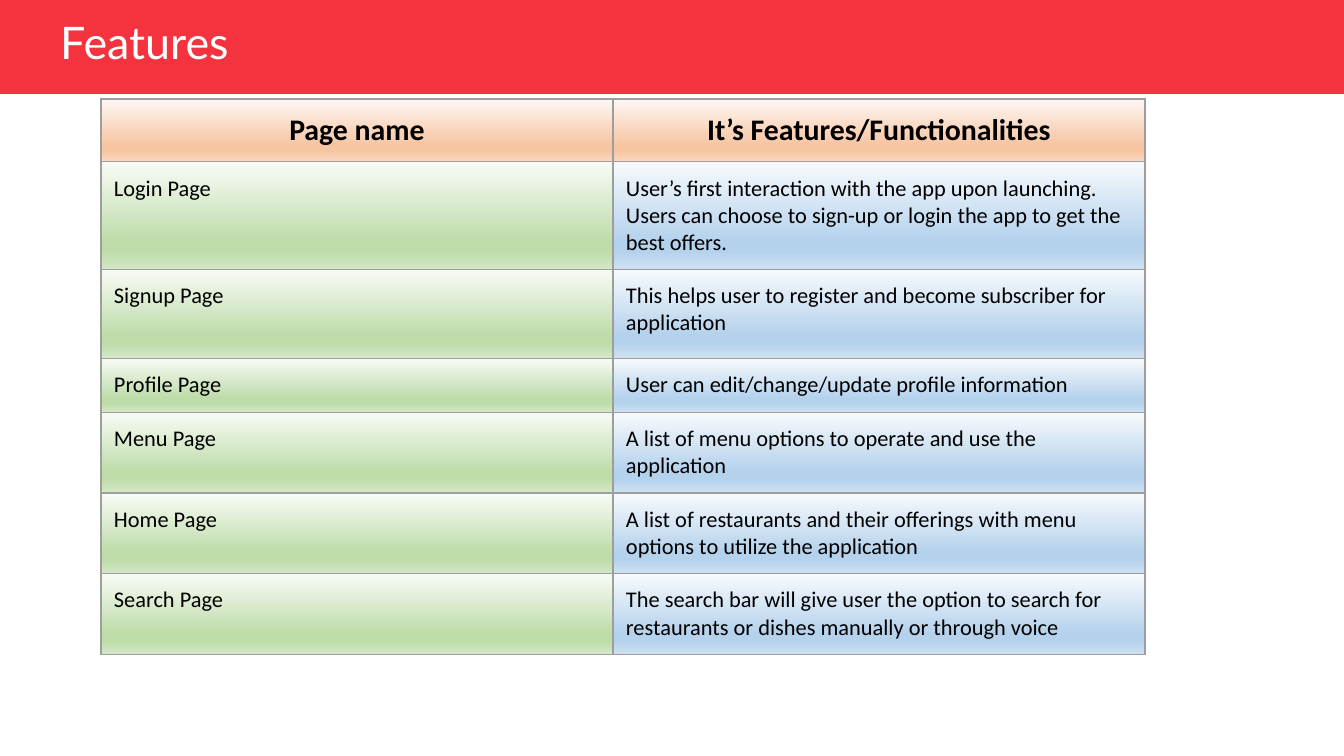
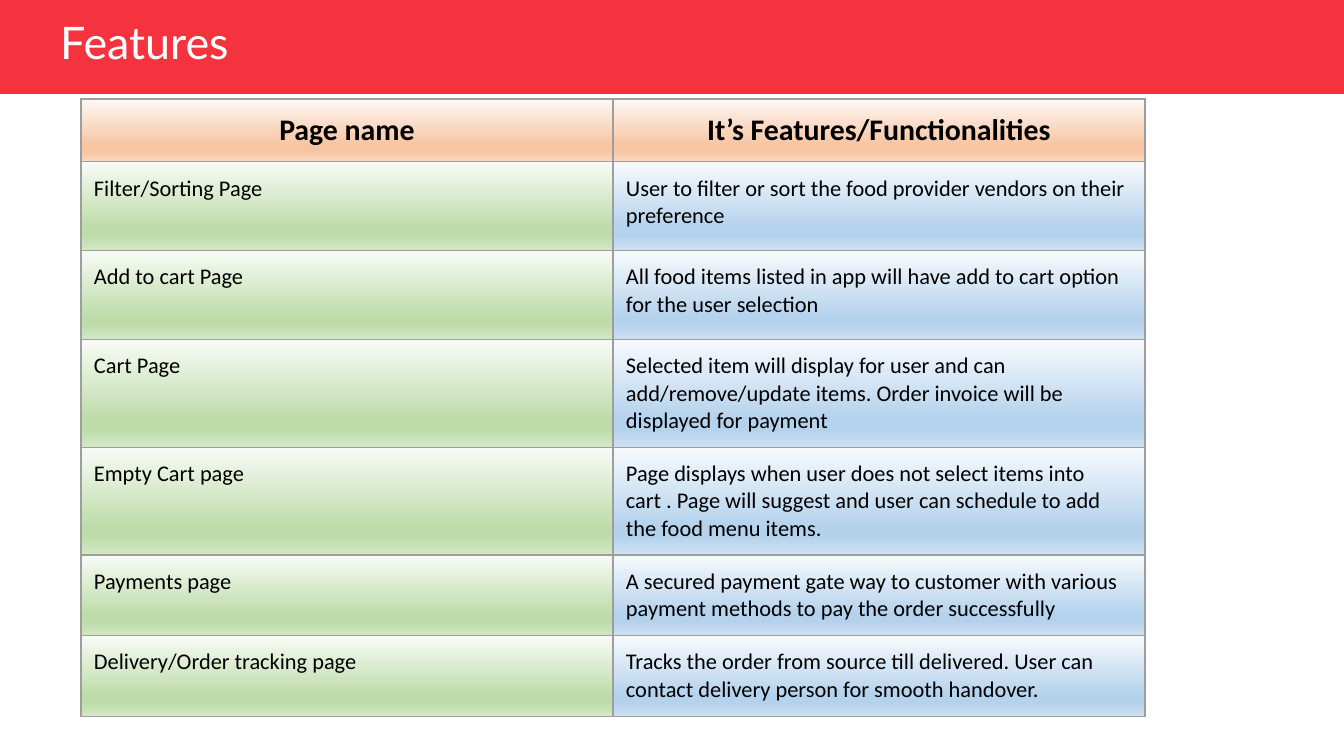
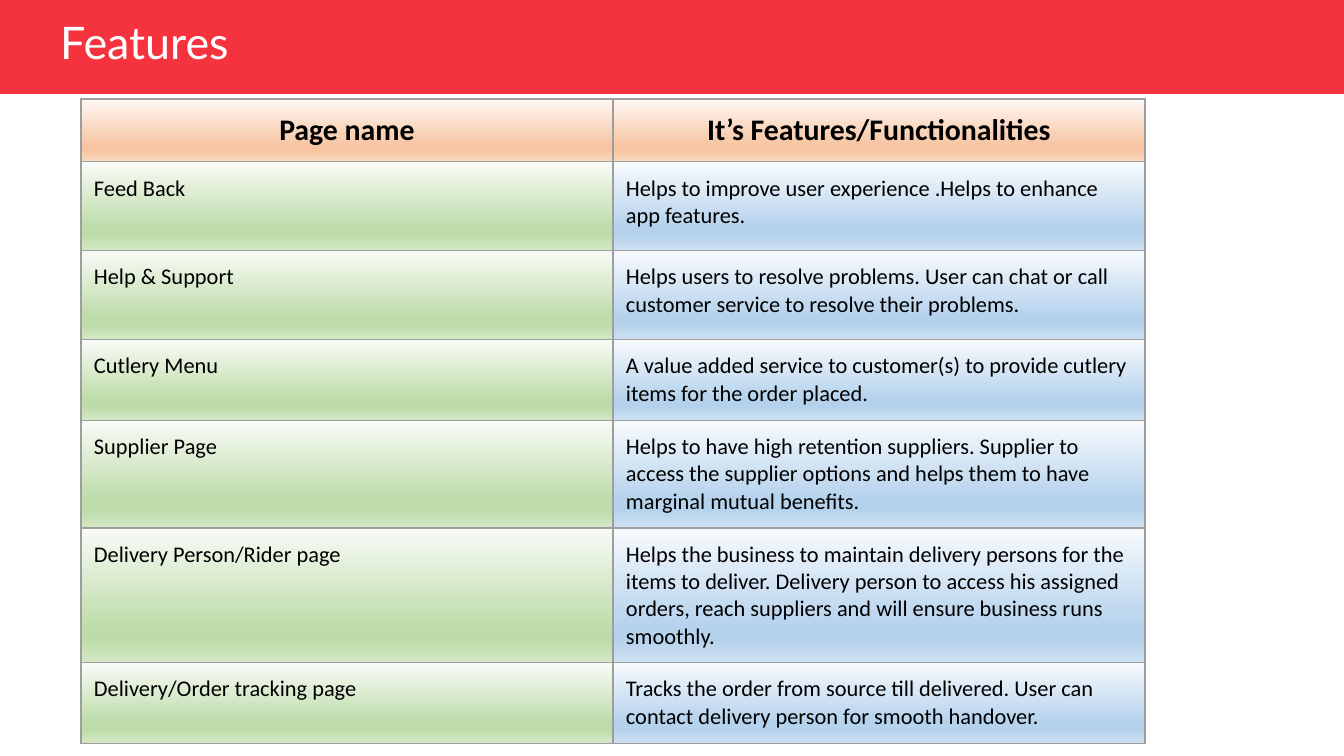
"""Build the three slides that list the features of a food app."""
from dataclasses import dataclass

from lxml.etree import SubElement as Sub
from pptx import Presentation
from pptx.dml.color import RGBColor as Rgb
from pptx.enum.shapes import MSO_SHAPE as Kind
from pptx.enum.text import MSO_ANCHOR as Anchor, PP_ALIGN as Align
from pptx.oxml.ns import qn
from pptx.util import Pt

SCALE = 9144000 / 1344


@dataclass(frozen=True)
class Theme:
    """Hold the colours, fonts and type sizes."""
    red: str = "F5333F"
    white: str = "FFFFFF"
    black: str = "000000"
    rule: str = "9E9E9E"
    peach: tuple = ("FEF8F5", "F7C5A2", "F7C5A2", "FAD8C1")
    green: tuple = ("F8FBF6", "BEDCAA", "BEDCAA", "D4E8C6")
    blue: tuple = ("F7FAFD", "B5D2EC", "B5D2EC", "CEE1F2")
    stops: tuple = (0, 74, 83, 100)
    head: str = "Lato"
    body: str = "Calibri"
    big: int = 24
    mid: int = 16
    small: int = 12
    line: float = 0.75


THEME = Theme()
HEADS = ("Page name", "It’s Features/Functionalities")
HIGH = (62, 89, 89, 44, 44, 44, 44)
MID, RIGHT, TOP = 613, 1145, 99
TRACK = ("Delivery/Order tracking page",
         "Tracks the order from source till delivered. User can contact delivery person for smooth handover.")

ENTRY = [
    ("Login Page",
     "User’s first interaction with the app upon launching. Users can choose to sign-up or login the app to get the best offers."),
    ("Signup Page", "This helps user to register and become subscriber for application"),
    ("Profile Page", "User can edit/change/update profile information"),
    ("Menu Page", "A list of menu options to operate and use the application"),
    ("Home Page", "A list of restaurants and their offerings with menu options to utilize the application"),
    ("Search Page",
     "The search bar will give user the option to search for restaurants or dishes manually or through voice"),
]
ORDER = [
    ("Filter/Sorting Page", "User to filter or sort the food provider vendors on their preference"),
    ("Add to cart Page", "All food items listed in app will have add to cart option for the user selection"),
    ("Cart Page",
     "Selected item will display for user and can add/remove/update items. Order invoice will be displayed for payment"),
    ("Empty Cart page",
     "Page displays when user does not select items into cart . Page will suggest and user can schedule to add the food menu items."),
    ("Payments page",
     "A secured payment gate way to customer with various payment methods to pay the order successfully"),
    TRACK,
]
CARE = [
    ("Feed Back", "Helps to improve user experience .Helps to enhance app features."),
    ("Help & Support",
     "Helps users to resolve problems. User can chat or call customer service to resolve their problems."),
    ("Cutlery Menu", "A value added service to customer(s) to provide cutlery items for the order placed."),
    ("Supplier Page",
     "Helps to have high retention suppliers. Supplier to access the supplier options and helps them to have marginal mutual benefits."),
    ("Delivery Person/Rider page",
     "Helps the business to maintain delivery persons for the items to deliver. Delivery person to access his assigned orders, reach suppliers and will ensure business runs smoothly."),
    TRACK,
]


def px(num):
    """Turn px into EMU."""
    return round(num * SCALE)


def write(frame, text, font=THEME.body, size=THEME.small, color=THEME.black,
          bold=False, align=Align.LEFT, space=1.0):
    """Put one styled paragraph into a text frame."""
    para = frame.paragraphs[0]
    para.alignment, para.line_spacing = align, space
    run = para.add_run()
    run.text = text
    run.font.name, run.font.size, run.font.bold = font, Pt(size), bold
    run.font.color.rgb = Rgb.from_string(color)


def tint(node, color):
    """Add a colour element to an XML node."""
    Sub(node, qn("a:srgbClr"), val=color)


def dress(cell, ramp):
    """Give a cell its borders and gradient fill."""
    props = cell._tc.get_or_add_tcPr()
    for side in "LRTB":
        edge = Sub(props, qn(f"a:ln{side}"), w=str(Pt(THEME.line)))
        tint(Sub(edge, qn("a:solidFill")), THEME.rule)
    grad = Sub(props, qn("a:gradFill"), rotWithShape="1")
    stops = Sub(grad, qn("a:gsLst"))
    for pos, color in zip(THEME.stops, ramp):
        tint(Sub(stops, qn("a:gs"), pos=str(pos * 1000)), color)
    Sub(grad, qn("a:lin"), ang="5400000", scaled="0")


def add_cell(cell, text, ramp, **form):
    """Fill one table cell with text and colour."""
    cell.margin_left = cell.margin_right = cell.margin_top = px(13)
    cell.margin_bottom = px(14)
    dress(cell, ramp)
    write(cell.text_frame, text, **form)


def add_band(slide):
    """Draw the red band across the top."""
    band = slide.shapes.add_shape(Kind.RECTANGLE, 0, 0, px(1344), px(94))
    band.shadow.inherit = False
    band.fill.solid()
    band.fill.fore_color.rgb = Rgb.from_string(THEME.red)
    band.line.fill.background()


def add_title(slide, text):
    """Set the slide title on the band."""
    frame = slide.shapes.add_textbox(px(47), px(17), px(596), px(56)).text_frame
    frame.word_wrap = True
    frame.vertical_anchor = Anchor.MIDDLE
    write(frame, text, font=THEME.head, size=THEME.big, color=THEME.white, space=0.9)


def add_grid(slide, left, rows):
    """Draw the feature table from its left edge."""
    grid = slide.shapes.add_table(len(rows) + 1, 2, px(left), px(TOP),
                                  px(RIGHT - left), px(sum(HIGH))).table
    grid.first_row = grid.horz_banding = False
    grid.columns[0].width, grid.columns[1].width = px(MID - left), px(RIGHT - MID)
    for row, high in zip(grid.rows, HIGH):
        row.height = px(high)
    for col, text in enumerate(HEADS):
        add_cell(grid.cell(0, col), text, THEME.peach, size=THEME.mid,
                 bold=True, align=Align.CENTER)
    for num, row in enumerate(rows, 1):
        for col, ramp in enumerate((THEME.green, THEME.blue)):
            add_cell(grid.cell(num, col), row[col], ramp)


def main():
    """Build and save the deck."""
    deck = Presentation()
    deck.slide_width, deck.slide_height = px(1344), px(756)
    for left, rows in ((101, ENTRY), (81, ORDER), (81, CARE)):
        slide = deck.slides.add_slide(deck.slide_layouts[6])
        add_band(slide)
        add_title(slide, "Features")
        add_grid(slide, left, rows)
    deck.save("out.pptx")


if __name__ == "__main__":
    main()
